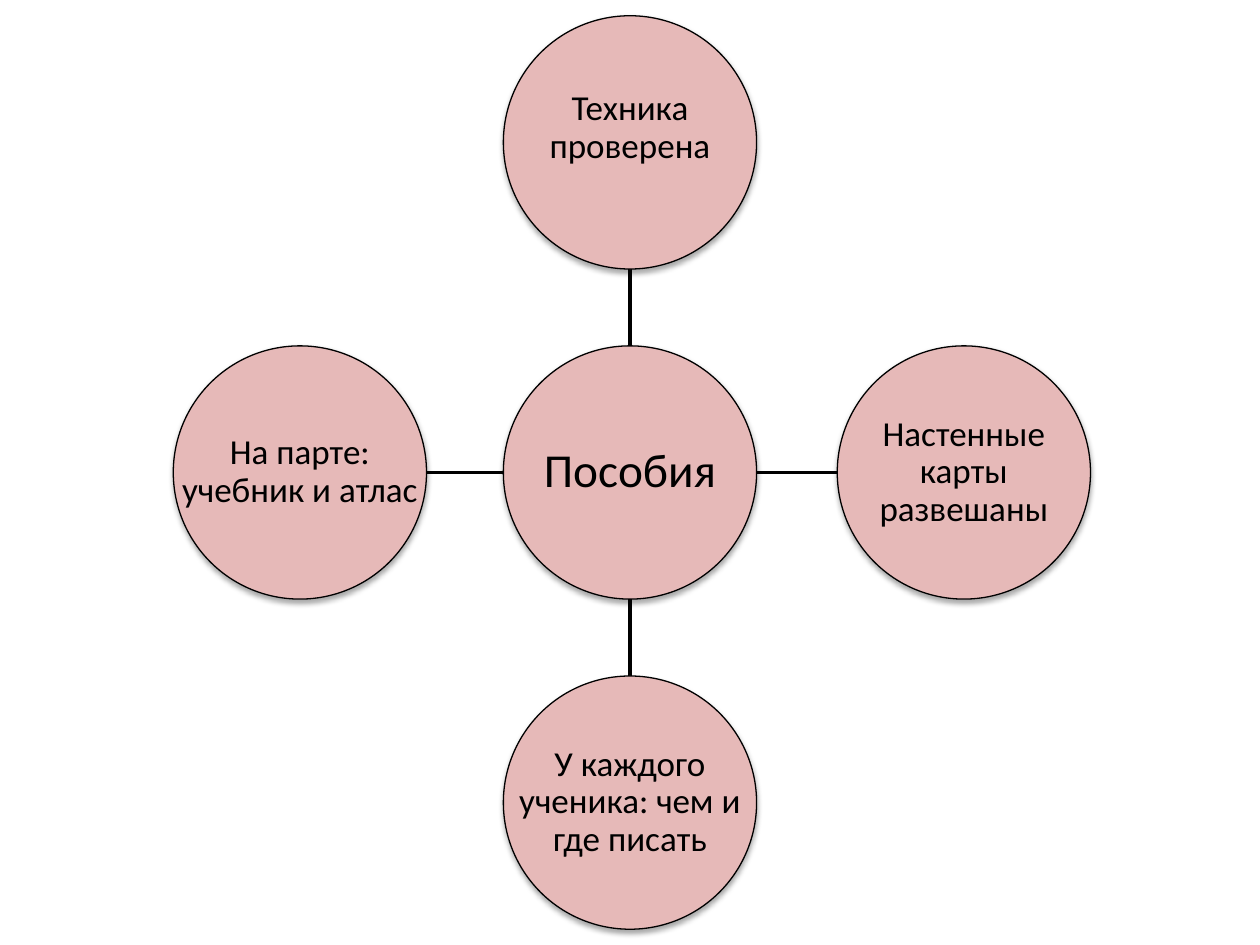
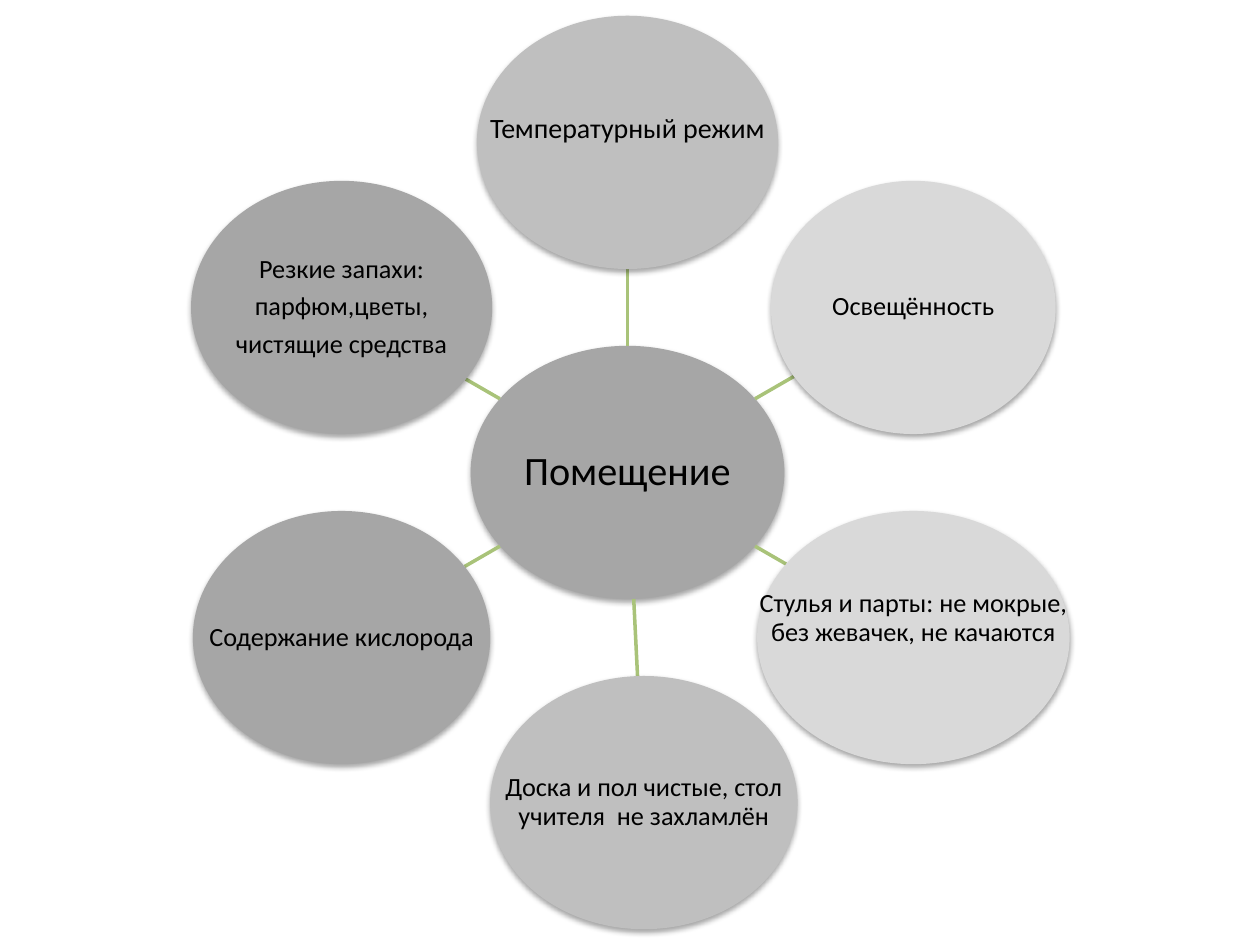
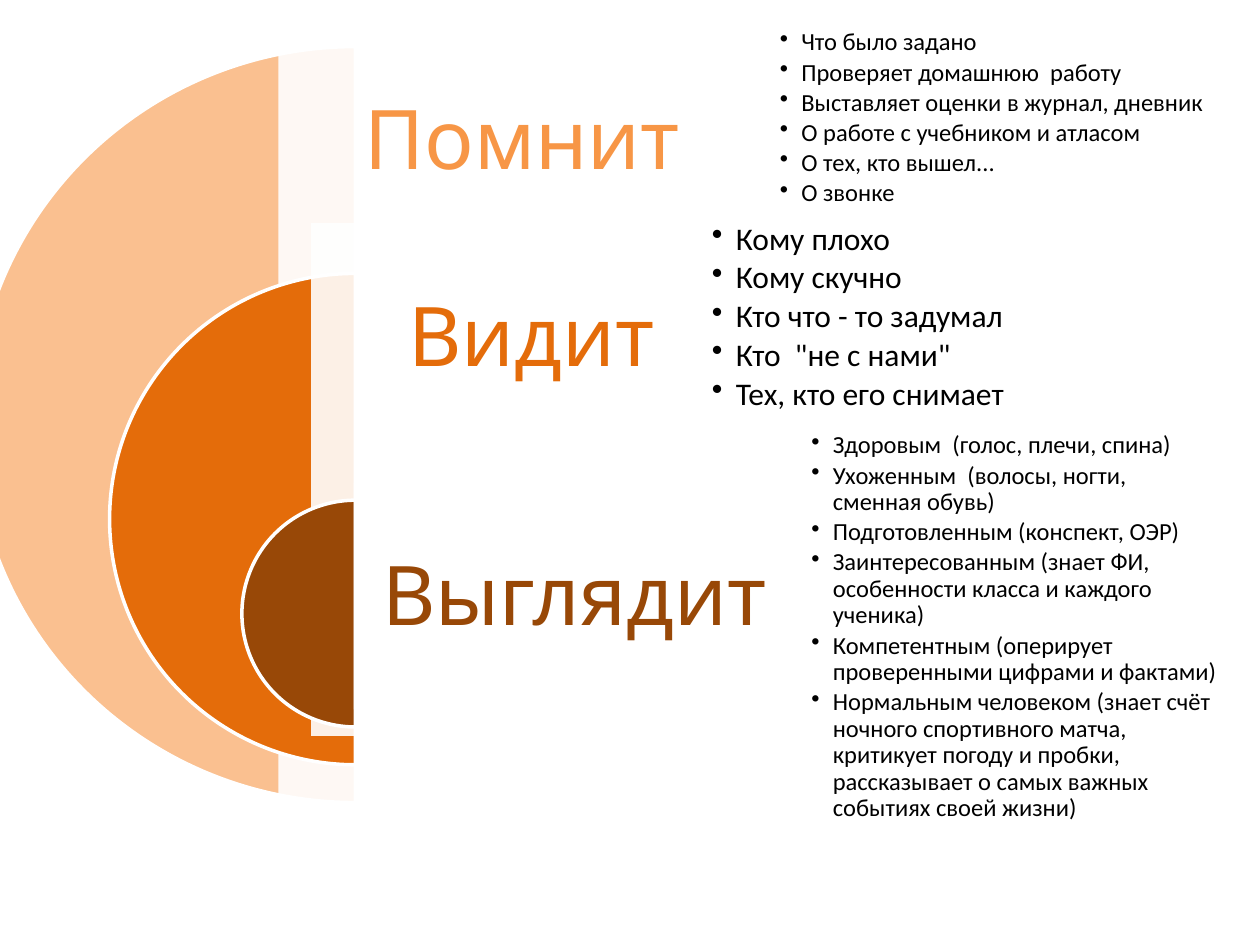
from dataclasses import dataclass
from math import cos, hypot, radians, sin

from lxml.etree import SubElement
from pptx import Presentation
from pptx.dml.color import RGBColor
from pptx.enum.shapes import MSO_CONNECTOR as Link, MSO_SHAPE as Kind
from pptx.enum.text import MSO_ANCHOR as Anchor, PP_ALIGN as Align
from pptx.oxml.ns import qn
from pptx.util import Inches, Pt


@dataclass(frozen=True)
class Theme:
    body: str = "Calibri"
    head: str = "Comic Neue"
    ink: str = "000000"
    white: str = "FFFFFF"
    rose: str = "E6B9B8"
    green: str = "A9C379"
    dark: str = "A6A6A6"
    mid: str = "BFBFBF"
    light: str = "D9D9D9"
    peach: str = "FAC090"
    amber: str = "F79646"
    orange: str = "E46C0A"
    brown: str = "984807"
    large: int = 47
    hub: int = 27
    room: int = 23
    node: int = 20
    list: int = 18
    label: int = 16
    small: int = 15
    item: int = 14
    stroke: float = 2


@dataclass
class Node:
    text: str
    fill: str
    size: int
    width: float = 2.01
    shift: float = 0
    lift: float = 0


def sub(root, tag, **attrs):
    return SubElement(root, qn(tag), **{k: str(v) for k, v in attrs.items()})


class Deck:
    tall = 2.01
    ring = 2.62

    def __init__(self, theme):
        self.theme = theme
        self.show = Presentation()
        self.show.slide_width = Inches(10)
        self.show.slide_height = Inches(7.5)
        self.slide = None

    def page(self):
        self.slide = self.show.slides.add_slide(self.show.slide_layouts[6])

    def shape(self, kind, at, fill, line=None, width=0.75):
        item = self.slide.shapes.add_shape(kind, *map(Inches, at))
        item.shadow.inherit = False
        item.fill.solid()
        item.fill.fore_color.rgb = RGBColor.from_string(fill)
        if line:
            item.line.color.rgb = RGBColor.from_string(line)
            item.line.width = Pt(width)
        else:
            item.line.fill.background()
        return item

    def text(self, at, words, size, color=None, face=None, pad=0.01,
             lift=0, after=0.35, hang=0):
        box = self.slide.shapes.add_textbox(*map(Inches, at))
        frame = box.text_frame
        frame.word_wrap = True
        frame.vertical_anchor = Anchor.MIDDLE
        frame.margin_left = frame.margin_right = frame.margin_top = Inches(pad)
        frame.margin_bottom = Inches(pad + 2 * lift)
        frame.text = words
        for para in frame.paragraphs:
            para.alignment = Align.LEFT if hang else Align.CENTER
            para.line_spacing = 0.9
            para.space_after = Pt(size * after)
            para.font.size = Pt(size)
            para.font.name = face or self.theme.body
            para.font.color.rgb = RGBColor.from_string(color or self.theme.ink)
            if hang:
                self.bullet(para, hang)

    def bullet(self, para, hang):
        props = para._p.get_or_add_pPr()
        props.set("marL", str(Inches(hang)))
        props.set("indent", str(-Inches(hang)))
        sub(props, "a:buChar", char="•")

    def oval(self, mid, node, line, pad):
        at = (mid[0] - node.width / 2, mid[1] - self.tall / 2,
              node.width, self.tall)
        item = self.shape(Kind.OVAL, at, node.fill, line)
        glow = sub(item._element.spPr.find(qn("a:effectLst")), "a:outerShdw",
                   blurRad=Pt(3.1), dist=Pt(1.8), dir=5400000, rotWithShape=0)
        tint = sub(glow, "a:srgbClr", val=self.theme.ink)
        sub(tint, "a:alpha", val=35000)
        self.text(at, node.text, node.size, pad=pad, lift=node.lift)

    def edge(self, mid, width, goal):
        dx, dy = goal[0] - mid[0], goal[1] - mid[1]
        part = 1 / hypot(dx / (width / 2), dy / (self.tall / 2))
        return mid[0] + dx * part, mid[1] + dy * part

    def link(self, start, end, color):
        line = self.slide.shapes.add_connector(
            Link.STRAIGHT, *map(Inches, start + end))
        line.line.color.rgb = RGBColor.from_string(color)
        line.line.width = Pt(self.theme.stroke)
        sub(line._element.spPr, "a:effectLst")

    def wheel(self, mid, hub, nodes, spoke, line=None):
        self.page()
        self.oval(mid, hub, line, 0.02)
        for i, node in enumerate(nodes):
            turn = radians(360 / len(nodes) * i)
            spot = (mid[0] + self.ring * sin(turn) + node.shift,
                    mid[1] - self.ring * cos(turn))
            self.link(self.edge(mid, hub.width, spot),
                      self.edge(spot, node.width, mid), spoke)
            self.oval(spot, node, line, 0.01)

    def half(self, at, fill):
        pie = self.shape(Kind.PIE, at, fill, self.theme.white, self.theme.stroke)
        pie.adjustments[0] = 54
        pie.adjustments[1] = 162

    def veil(self, at, alpha):
        item = self.shape(Kind.RECTANGLE, at, self.theme.white)
        tint = item._element.spPr.find(qn("a:solidFill"))[0]
        sub(tint, "a:alpha", val=alpha * 1000)

    def layer(self, pie, fill, veil, alpha, title, color, width):
        self.half(pie, fill)
        self.veil(veil, alpha)
        left, top, tall = veil[0], veil[1], 1.85
        self.text((left, top, width, tall), title, self.theme.large, color,
                  self.theme.head, pad=0.2)

    def points(self, at, lines, size, hang, lift=0):
        self.text(at, "\n".join(lines), size, pad=0.27, lift=lift,
                  after=0.15, hang=hang)


def main():
    look = Theme()
    deck = Deck(look)

    deck.wheel((5, 3.75), Node("Пособия", look.rose, look.hub), [
        Node("Техника проверена", look.rose, look.node, lift=0.11),
        Node("Настенные карты развешаны", look.rose, look.node, shift=0.03),
        Node("У каждого ученика: чем и где писать", look.rose, look.node),
        Node("На парте: учебник и атлас", look.rose, look.node),
    ], look.ink, look.ink)

    deck.wheel((4.98, 3.75), Node("Помещение", look.dark, look.room, 2.49), [
        Node("Температурный режим", look.mid, look.label, 2.39, lift=0.1),
        Node("Освещённость", look.light, look.small, 2.26),
        Node("Стулья и парты: не мокрые, без жевачек, не качаются",
             look.light, look.small, 2.48, lift=0.15),
        Node("Доска и пол чистые, стол учителя  не захламлён",
             look.mid, look.small, 2.44, shift=0.13),
        Node("Содержание кислорода", look.dark, look.small, 2.36),
        Node("Резкие запахи:\nпарфюм,цветы,\nчистящие средства",
             look.dark, look.small, 2.39),
    ], look.green)

    deck.page()
    deck.layer((-0.21, 0.37, 6.06, 6), look.peach, (2.21, 0.21, 7.74, 6.32),
               90, "Помнит", look.amber, 3.87)
    deck.layer((0.87, 2.17, 3.9, 3.9), look.orange, (2.47, 1.77, 7, 4.07),
               90, "Видит", look.orange, 3.5)
    deck.layer((1.92, 3.97, 1.8, 1.8), look.brown, (2.81, 3.83, 7, 1.8),
               100, "Выглядит", look.brown, 3.5)
    deck.points((5.92, 0.29, 4.3, 1.8), [
        "Что было задано",
        "Проверяет домашнюю  работу",
        "Выставляет оценки в журнал, дневник",
        "О работе с учебником и атласом",
        "О тех, кто вышел...",
        "О звонке",
    ], look.item, 0.17, lift=0.25)
    deck.points((5.38, 1.62, 3.5, 1.8), [
        "Кому плохо",
        "Кому скучно",
        "Кто что - то задумал",
        'Кто  "не с нами"',
        "Тех, кто его снимает",
    ], look.list, 0.19)
    deck.points((6.17, 3.85, 3.8, 2.26), [
        "Здоровым  (голос, плечи, спина)",
        "Ухоженным  (волосы, ногти,  сменная обувь)",
        "Подготовленным (конспект, ОЭР)",
        "Заинтересованным (знает ФИ, особенности класса и каждого ученика)",
        "Компетентным (оперирует проверенными цифрами и фактами)",
        "Нормальным человеком (знает счёт ночного спортивного матча, "
        "критикует погоду и пробки, рассказывает о самых важных "
        "событиях своей жизни)",
    ], look.item, 0.17)

    deck.show.save("out.pptx")


if __name__ == "__main__":
    main()
